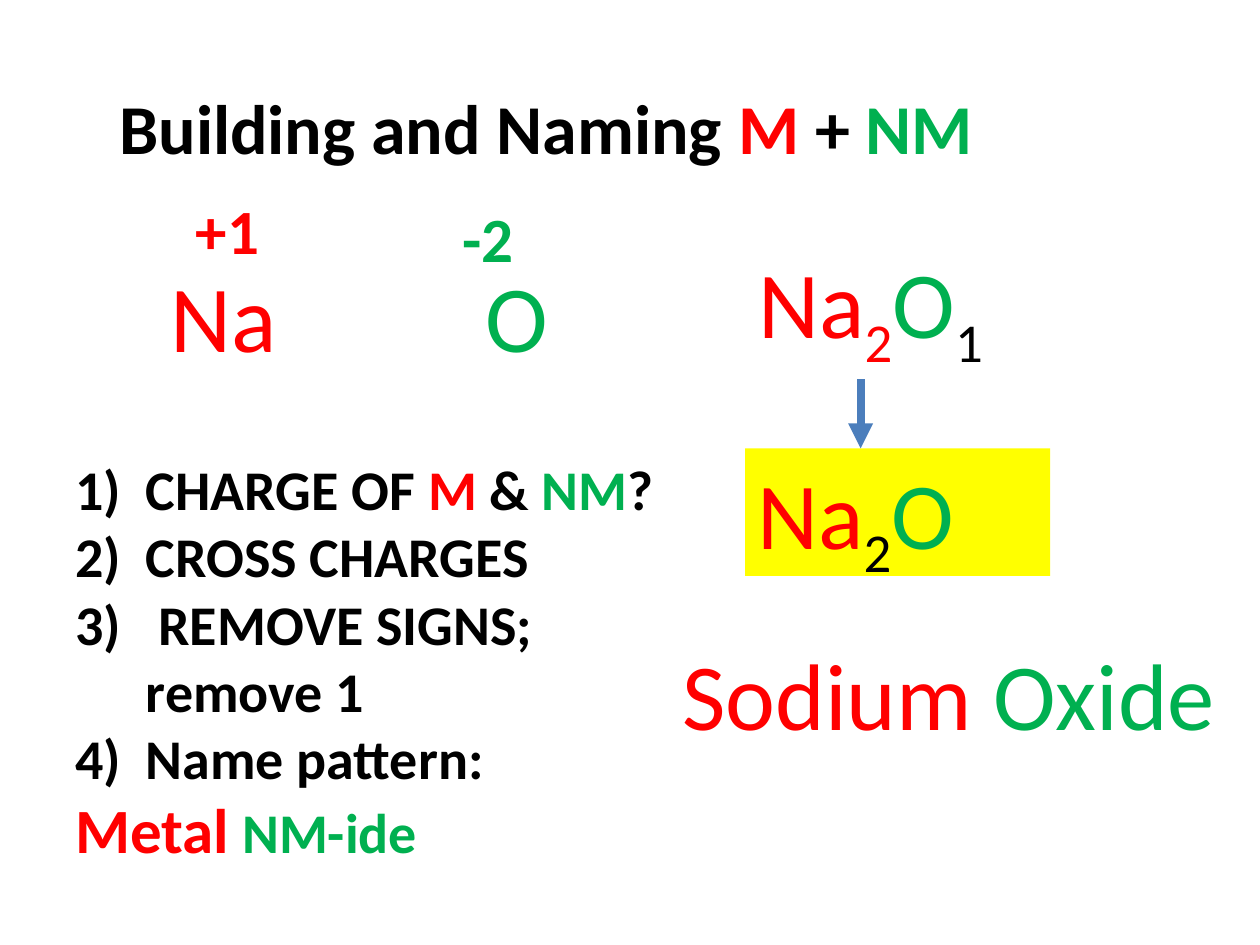
from dataclasses import dataclass
from typing import Optional

from lxml import etree
from pptx import Presentation, util as u
from pptx.dml.color import RGBColor
from pptx.enum import shapes, text
from pptx.oxml import ns

BLACK = RGBColor(0x00, 0x00, 0x00)
RED = RGBColor(0xFF, 0x00, 0x00)
GREEN = RGBColor(0x00, 0xB0, 0x50)
YELLOW = RGBColor(0xFF, 0xFF, 0x00)
BLUE = RGBColor(0x4B, 0x7E, 0xBC)
FONT = "Calibri"
SUBSCRIPT = "-25000"
STEP_INDENT = u.Cm(1.42)


@dataclass(frozen=True)
class Span:
    words: str
    color: RGBColor = BLACK
    size: float = 54
    bold: bool = False
    subscript: bool = False


@dataclass(frozen=True)
class Label:
    left: float
    top: float
    width: float
    height: float
    spans: tuple[Span, ...]
    fill: Optional[RGBColor] = None


def heading(words: str, color: RGBColor = BLACK, size: float = 40) -> Span:
    return Span(words, color, size, bold=True)


def step(words: str, color: RGBColor = BLACK, size: float = 32) -> Span:
    return Span(words, color, size, bold=True)


SODIUM = Span("Na", RED)
OXYGEN = Span("O", GREEN)

LABELS = (
    Label(1.9, 1.57, 22.23, 1.96, (
        heading(" ", size=32), heading("Building and Naming "),
        heading("M ", RED), heading("+ "), heading("NM", GREEN))),
    Label(3.18, 5.08, 5.51, 2.57, (SODIUM,)),
    Label(9.53, 5.08, 2.74, 2.57, (OXYGEN,)),
    Label(3.7, 3.73, 4.45, 1.8, (heading("+1", RED, 36),)),
    Label(9.07, 3.89, 4.45, 1.8, (heading("-2", GREEN, 36),)),
    Label(15.04, 4.8, 9.09, 2.57, (
        SODIUM, Span("2", RED, subscript=True),
        OXYGEN, Span("1", subscript=True))),
    Label(15.02, 9.04, 6.15, 2.57, (
        SODIUM, Span("2", subscript=True), OXYGEN), YELLOW),
    Label(13.51, 12.7, 11.89, 2.57, (
        Span("Sodium ", RED), Span("Oxide", GREEN))),
)

STEPS = (
    (step("CHARGE OF "), step("M", RED), step(" & "),
     step("NM", GREEN), step("?")),
    (step("CROSS CHARGES"),),
    (step(" REMOVE SIGNS; remove 1"),),
    (step("Name pattern:"),),
)
PATTERN = (step("Metal", RED, 36), step(" "), step("NM-ide", GREEN))


def add_span(para, words: str, *, color: RGBColor, size: float,
             bold: bool, subscript: bool) -> None:
    run = para.add_run()
    run.text = words
    run.font.name = FONT
    run.font.size = u.Pt(size)
    run.font.bold = bold
    run.font.color.rgb = color
    if subscript:
        run.font._element.set("baseline", SUBSCRIPT)


def fill_paragraph(para, spans: tuple[Span, ...]) -> None:
    para.alignment = text.PP_ALIGN.LEFT
    for span in spans:
        add_span(para, span.words, color=span.color, size=span.size,
                 bold=span.bold, subscript=span.subscript)


def add_label(page, label: Label):
    bounds = [u.Cm(value) for value in
              (label.left, label.top, label.width, label.height)]
    if label.fill is None:
        box = page.shapes.add_textbox(*bounds)
    else:
        box = page.shapes.add_shape(shapes.MSO_SHAPE.RECTANGLE, *bounds)
        box.shadow.inherit = False
        box.fill.solid()
        box.fill.fore_color.rgb = label.fill
        box.line.fill.background()
    frame = box.text_frame
    frame.word_wrap = True
    frame.vertical_anchor = text.MSO_ANCHOR.TOP
    fill_paragraph(frame.paragraphs[0], label.spans)
    return box


def number_paragraph(para) -> None:
    properties = para._p.get_or_add_pPr()
    properties.set("marL", str(STEP_INDENT))
    properties.set("indent", str(-STEP_INDENT))
    etree.SubElement(properties, ns.qn("a:buFont"), typeface="+mj-lt")
    etree.SubElement(properties, ns.qn("a:buAutoNum"), type="arabicParenR")


def add_steps(page) -> None:
    box = add_label(page, Label(1.27, 9.04, 12.27, 8.64, STEPS[0]))
    frame = box.text_frame
    for spans in STEPS[1:]:
        fill_paragraph(frame.add_paragraph(), spans)
    for para in frame.paragraphs:
        number_paragraph(para)
    fill_paragraph(frame.add_paragraph(), PATTERN)


def add_arrow(page, x: float, top: float, bottom: float) -> None:
    arrow = page.shapes.add_connector(
        shapes.MSO_CONNECTOR.STRAIGHT,
        u.Cm(x), u.Cm(top), u.Cm(x), u.Cm(bottom))
    arrow.line.color.rgb = BLUE
    arrow.line.width = u.Pt(4.75)
    outline = arrow.line._get_or_add_ln()
    etree.SubElement(outline, ns.qn("a:tailEnd"), type="triangle")
    etree.SubElement(arrow._element.spPr, ns.qn("a:effectLst"))


def main() -> None:
    deck = Presentation()
    deck.slide_width, deck.slide_height = u.Cm(25.4), u.Cm(19.05)
    page = deck.slides.add_slide(deck.slide_layouts[6])
    for label in LABELS:
        add_label(page, label)
    add_steps(page)
    add_arrow(page, x=17.35, top=7.65, bottom=9.04)
    deck.save("out.pptx")


if __name__ == "__main__":
    main()
